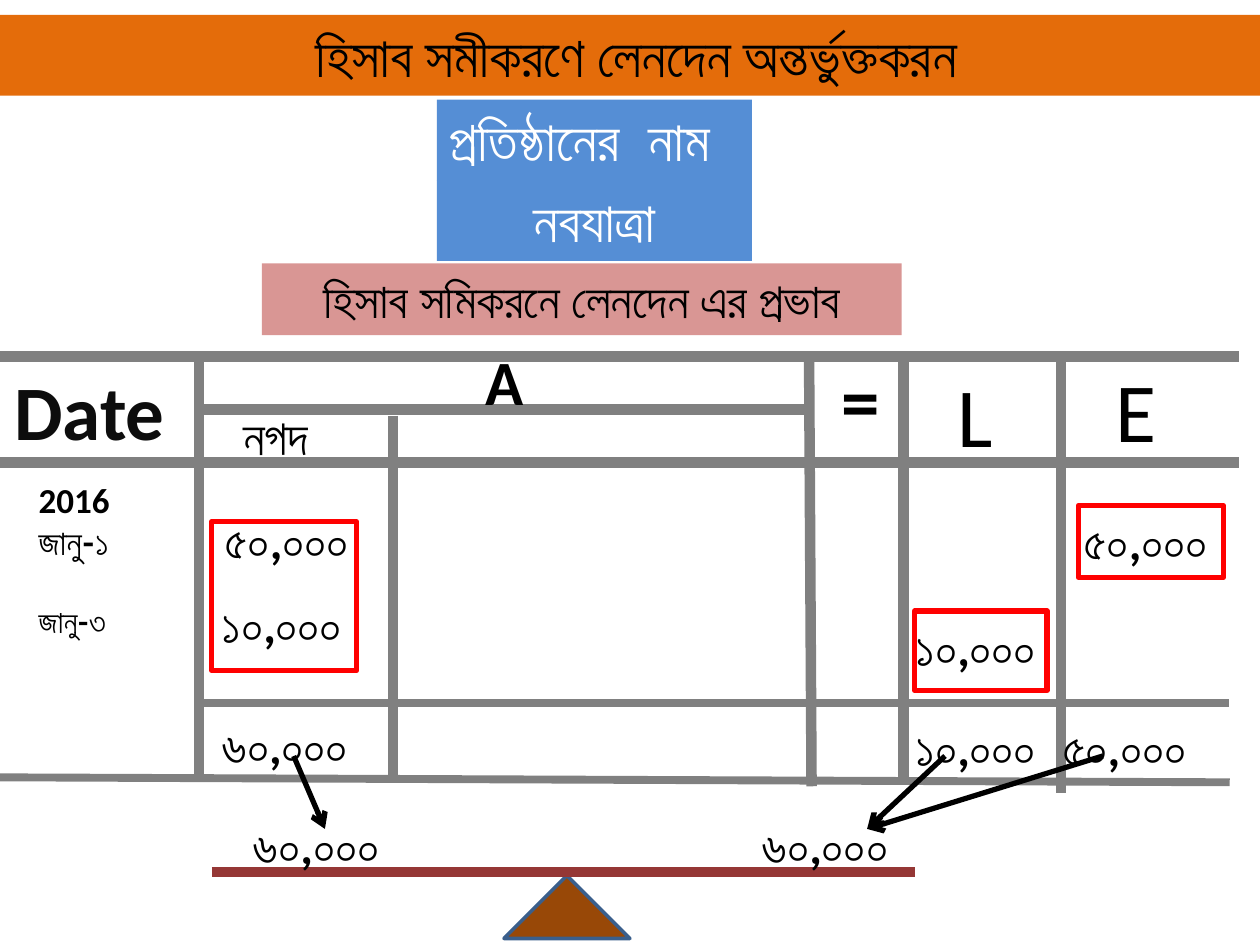
from lxml import etree
from pptx import Presentation
from pptx import util as u
from pptx.dml.color import RGBColor
from pptx.enum import shapes, text
from pptx.oxml.ns import qn

BLACK = RGBColor(0x00, 0x00, 0x00)
NEAR_BLACK = RGBColor(0x0D, 0x0D, 0x0D)
WHITE = RGBColor(0xFF, 0xFF, 0xFF)
GREY = RGBColor(0x80, 0x80, 0x80)
ORANGE = RGBColor(0xE4, 0x6C, 0x0A)
BLUE = RGBColor(0x55, 0x8E, 0xD5)
PINK = RGBColor(0xD9, 0x96, 0x94)
RED = RGBColor(0xFF, 0x00, 0x00)
MAROON = RGBColor(0x95, 0x37, 0x35)
BROWN = RGBColor(0x98, 0x48, 0x07)
NAVY = RGBColor(0x3A, 0x5F, 0x8C)

LEFT, CENTER = text.PP_ALIGN.LEFT, text.PP_ALIGN.CENTER
TOP, MIDDLE = text.MSO_ANCHOR.TOP, text.MSO_ANCHOR.MIDDLE
BODY = {"size": u.Pt(28), "bold": True, "name": "Calibri"}

# Ledger grid, in centimetres
TOP_RULE, ASSET_RULE, HEAD_RULE, TOTAL_RULE, BOTTOM_RULE = 7.19, 8.26, 9.32, 14.17, 15.67
DATE_END, CASH_END, ASSET_END, EQUALS_END, LIABILITY_END = 4.01, 7.92, 16.31, 18.21, 21.39
BEAM_Y = 17.58


def set_place(shape, place):
    for name, value in zip(("left", "top", "width", "height"), place):
        setattr(shape, name, u.Cm(value))


def write(shape, lines, color=BLACK, align=LEFT, anchor=TOP, wrap=True):
    """Fill a shape with (wording, font format) lines."""
    frame = shape.text_frame
    frame.word_wrap = wrap
    frame.auto_size = text.MSO_AUTO_SIZE.NONE
    frame.vertical_anchor = anchor
    for index, (wording, font_format) in enumerate(lines):
        paragraph = frame.add_paragraph() if index else frame.paragraphs[0]
        paragraph.alignment = align
        run = paragraph.add_run()
        run.text = wording
        for name, value in {**BODY, **font_format}.items():
            setattr(run.font, name, value)
        run.font.color.rgb = color
        # Bengali letters take the complex-script font
        complex_font = etree.SubElement(run.font._element, qn("a:cs"))
        complex_font.set("typeface", run.font.name)


def add_title(slide, wording):
    title = slide.shapes.title
    set_place(title, (0, 0.3, 25.4, 1.63))
    title.fill.solid()
    title.fill.fore_color.rgb = ORANGE
    write(title, [(wording, {"size": u.Pt(32), "bold": False})], align=CENTER)


def add_figure(slide, kind, place, fill=None, line=None, width=0):
    shape = slide.shapes.add_shape(kind, *map(u.Cm, place))
    shape.shadow.inherit = False
    if fill is None:
        shape.fill.background()
    else:
        shape.fill.solid()
        shape.fill.fore_color.rgb = fill
    if line is None:
        shape.line.fill.background()
    else:
        shape.line.color.rgb = line
        shape.line.width = u.Pt(width)
    return shape


def add_label(slide, place, lines, **options):
    write(slide.shapes.add_textbox(*map(u.Cm, place)), lines, **options)


def add_line(slide, points, color=GREY, width=6, arrow=False):
    connector = slide.shapes.add_connector(shapes.MSO_CONNECTOR.STRAIGHT, *map(u.Cm, points))
    connector.line.color.rgb = color
    connector.line.width = u.Pt(width)
    if arrow:
        etree.SubElement(connector.line._get_or_add_ln(), qn("a:tailEnd")).set("type", "arrow")
    etree.SubElement(connector._element.spPr, qn("a:effectLst"))


def add_headings(slide):
    rectangle = shapes.MSO_SHAPE.RECTANGLE
    regular = {"name": "Lato", "bold": False, "size": u.Pt(32)}
    for top, wording, align in (
        (2.01, "প্রতিষ্ঠানের  নাম", LEFT),
        (3.63, "নবযাত্রা", CENTER),
    ):
        box = add_figure(slide, rectangle, (8.81, top, 6.35, 1.63), BLUE)
        write(box, [(wording, regular)], WHITE, align)
    box = add_figure(slide, rectangle, (5.28, 5.31, 12.9, 1.45), PINK)
    write(box, [("হিসাব সমিকরনে লেনদেন এর প্রভাব", {"name": "Lato"})], align=CENTER)


def add_grid(slide):
    for points in (
        (0, TOP_RULE, 24.97, TOP_RULE),
        (0, HEAD_RULE, 24.97, HEAD_RULE),
        (DATE_END, ASSET_RULE, ASSET_END, ASSET_RULE),
        (DATE_END, TOP_RULE, DATE_END, BOTTOM_RULE),
        (CASH_END, 8.38, CASH_END, BOTTOM_RULE),
        (ASSET_END, TOP_RULE, 16.36, 15.85),
        (EQUALS_END, TOP_RULE, EQUALS_END, 15.77),
        (LIABILITY_END, TOP_RULE, LIABILITY_END, 15.98),
    ):
        add_line(slide, points)
    add_line(slide, (DATE_END, TOTAL_RULE, 24.77, TOTAL_RULE), width=4.5)
    add_line(slide, (0, BOTTOM_RULE, 24.79, 15.77), width=4.5)


def add_column_heads(slide):
    add_label(slide, (0, 7.62, 3.61, 1.27), [("Date", {"size": u.Pt(44)})],
              color=NEAR_BLACK, align=CENTER, anchor=MIDDLE)
    for place, wording, size, bold in (
        ((9.53, 6.78, 1.9, 1.8), "A", 36, True),
        ((16.71, 6.99, 1.47, 2.13), "=", 44, True),
        ((19.05, 7.21, 1.9, 2.31), "L", 48, False),
        ((22.23, 7.11, 1.9, 2.31), "E", 48, False),
    ):
        add_label(slide, place, [(wording, {"size": u.Pt(size), "bold": bold})])
    add_label(slide, (4.65, 8.08, 2.54, 1.45), [("নগদ", {"name": "Lato"})])


def add_entries(slide):
    # Dates
    add_label(slide, (0.53, 9.53, 3.07, 1.96), [
        ("2016", {"size": u.Pt(20)}),
        ("জানু-১", {"size": u.Pt(20), "name": "Lato"}),
    ])
    add_label(slide, (0.53, 12.01, 2.64, 1.8), [("জানু-৩", {"size": u.Pt(18), "name": "Lato"})])

    # Amounts and column totals
    for left, top, amount in (
        (4.27, 10.16, "৫০,০০০"),
        (21.59, 10.19, "৫০,০০০"),
        (4.22, 11.86, "১০,০০০"),
        (18.21, 12.32, "১০,০০০"),
        (4.22, 14.3, "৬০,০০০"),
        (18.21, 14.33, "১০,০০০"),
        (21.16, 14.33, "৫০,০০০"),
    ):
        add_label(slide, (left, top, 3.18, 1.45), [(amount, {})])

    # Red frames round the new entries
    for place in (
        (4.27, 10.52, 2.92, 3),
        (18.44, 12.32, 2.67, 1.6),
        (21.74, 10.19, 2.92, 1.45),
    ):
        add_figure(slide, shapes.MSO_SHAPE.RECTANGLE, place, line=RED, width=3)


def add_balance(slide):
    add_figure(slide, shapes.MSO_SHAPE.ISOSCELES_TRIANGLE, (10.16, 17.65, 2.54, 1.27),
               BROWN, NAVY, 2)
    add_line(slide, (4.27, BEAM_Y, 18.44, BEAM_Y), MAROON)
    for start, end in ((5.92, 6.55), (19.05, 17.48), (22.23, 17.48)):
        add_line(slide, (start, 15.24, end, 16.71), BLACK, 3, arrow=True)
    for left in (4.85, 15.11):
        add_label(slide, (left, 16.32, 3.07, 1.45), [("৬০,০০০", {})], wrap=False)


def main():
    presentation = Presentation()
    presentation.slide_width, presentation.slide_height = u.Cm(25.4), u.Cm(19.05)
    slide = presentation.slides.add_slide(presentation.slide_layouts[5])
    add_title(slide, " হিসাব সমীকরণে লেনদেন অন্তর্ভুক্তকরন")
    add_headings(slide)
    add_grid(slide)
    add_column_heads(slide)
    add_entries(slide)
    add_balance(slide)
    presentation.save("out.pptx")


if __name__ == "__main__":
    main()
